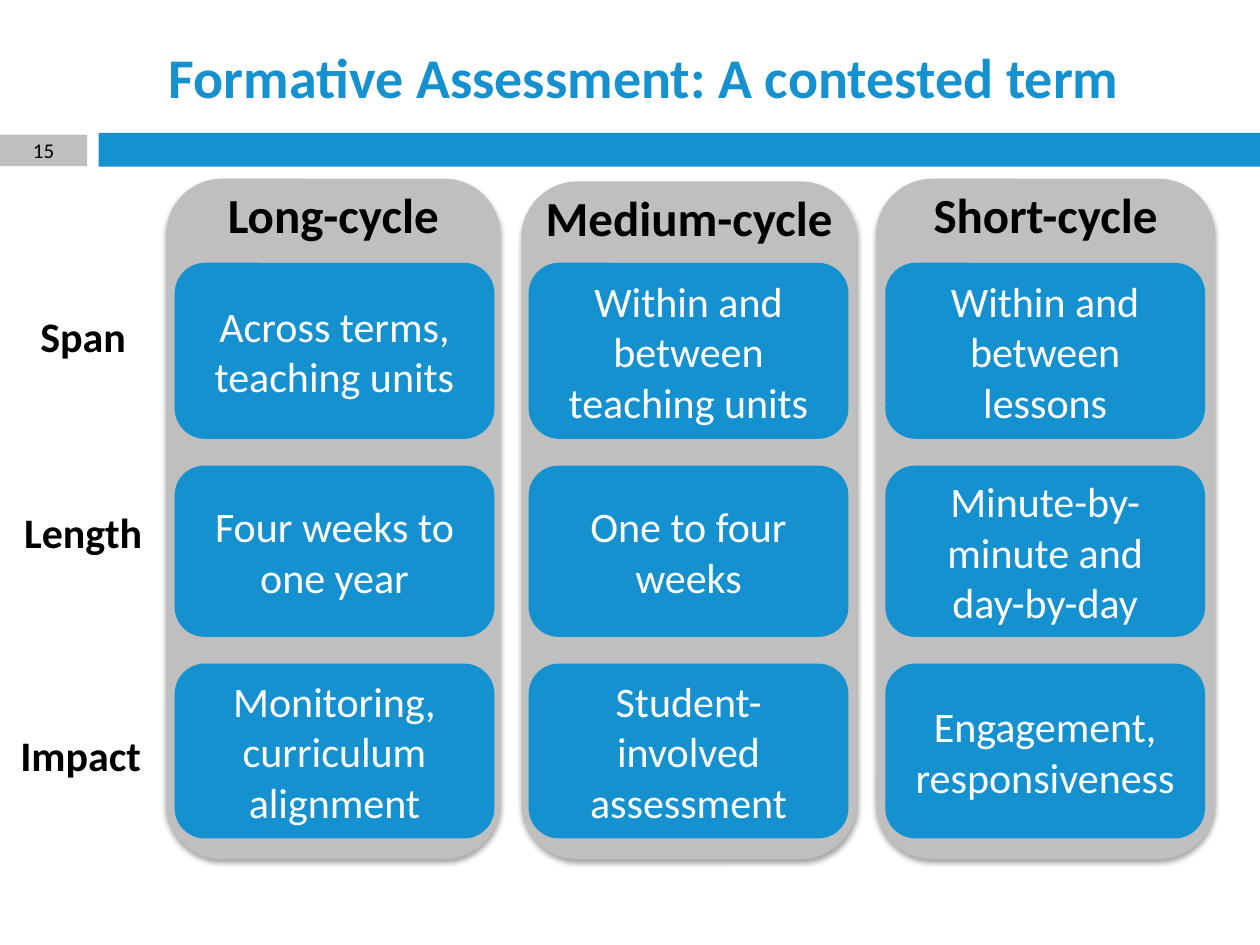
from lxml.etree import SubElement
from pptx import Presentation
from pptx.dml.color import RGBColor
from pptx.enum.shapes import MSO_SHAPE as Shape
from pptx.enum.text import MSO_ANCHOR as Anchor, PP_ALIGN as Align
from pptx.oxml.ns import qn
from pptx.util import Pt

BLUE = RGBColor(0x16, 0x91, 0xD0)
GREY = RGBColor(0xBF, 0xBF, 0xBF)
BLACK = RGBColor(0, 0, 0)
WHITE = RGBColor(0xFF, 0xFF, 0xFF)

# top and height of the cells in each row
ROWS = [(151.2, 98.6), (267.1, 95.8), (380.2, 97.9)]
LABELS = [("Span", 0, 174.2), ("Length", 0, 285.8), ("Impact", -1.4, 413.3)]
# heading, column box, left of cells, cell texts
COLUMNS = [
    ("Long-cycle", (95, 102.2, 190.8, 388.8), 100.8,
     ["Across terms, teaching units", "Four weeks to\none year",
      "Monitoring, curriculum alignment"]),
    ("Medium-cycle", (298, 103.7, 191.5, 387.3), 303.1,
     ["Within and between teaching units", "One to four weeks",
      "Student-involved assessment"]),
    ("Short-cycle", (500.6, 102.2, 193.7, 388.8), 506.9,
     ["Within and between lessons", "Minute-by-minute and day-by-day",
      "Engagement, responsiveness"]),
]
CELL_WIDTH = 180.7


def write(shape, text, size, color, bold=False, anchor=Anchor.MIDDLE):
    frame = shape.text_frame
    frame.text = text
    frame.word_wrap = True
    frame.vertical_anchor = anchor
    for para in frame.paragraphs:
        para.alignment = Align.CENTER
        font = para.font
        font.name, font.size, font.bold = "Calibri", Pt(size), bold
        font.color.rgb = color


def add_text(slide, box, text, size, color, bold=True, anchor=Anchor.TOP):
    area = slide.shapes.add_textbox(*map(Pt, box))
    write(area, text, size, color, bold, anchor)
    return area


def add_block(slide, kind, box, fill):
    block = slide.shapes.add_shape(kind, *map(Pt, box))
    block.shadow.inherit = False
    block.fill.solid()
    block.fill.fore_color.rgb = fill
    block.line.fill.background()
    return block


def add_shadow(block):
    effects = block._element.spPr.find(qn("a:effectLst"))
    outer = SubElement(effects, qn("a:outerShdw"), blurRad=str(Pt(3.1)),
                       dist=str(Pt(1.8)), dir="5400000", rotWithShape="0")
    color = SubElement(outer, qn("a:srgbClr"), val="000000")
    SubElement(color, qn("a:alpha"), val="35000")


def add_header(slide, box):
    """Title above a bar, with the slide number in a tab at the left."""
    left, top, width, height = box
    bar = left + 56.4
    add_block(slide, Shape.RECTANGLE,
              (bar, top + 76, width - 56.4, 19.2), BLUE)
    tab = add_block(slide, Shape.RECTANGLE, (left, top + 77, 49.8, 18), GREY)
    tab.text_frame.margin_top = tab.text_frame.margin_bottom = 0
    write(tab, "15", 12, BLACK)
    add_text(slide, (bar, top + 18.7, 623.5, 49),
             "Formative Assessment: A contested term", 32, BLUE,
             anchor=Anchor.MIDDLE)


def add_column(slide, box, head, inner, texts):
    left, top, width, _ = box
    add_shadow(add_block(slide, Shape.ROUNDED_RECTANGLE, box, GREY))
    add_text(slide, (left, top, width, 41), head, 28, BLACK)
    for text, (row, height) in zip(texts, ROWS):
        cell = add_block(slide, Shape.ROUNDED_RECTANGLE,
                         (inner, row, CELL_WIDTH, height), BLUE)
        cell.line.color.rgb = BLUE
        cell.line.width = Pt(2)
        write(cell, text, 24, WHITE)


def main():
    deck = Presentation()
    deck.slide_width, deck.slide_height = Pt(720), Pt(540)
    slide = deck.slides.add_slide(deck.slide_layouts[6])
    add_header(slide, (0, 0, 720, 95.2))
    for text, left, top in LABELS:
        add_text(slide, (left, top, 95, 36), text, 24, BLACK)
    for head, box, inner, texts in COLUMNS:
        add_column(slide, box, head, inner, texts)
    deck.save("out.pptx")


if __name__ == "__main__":
    main()
